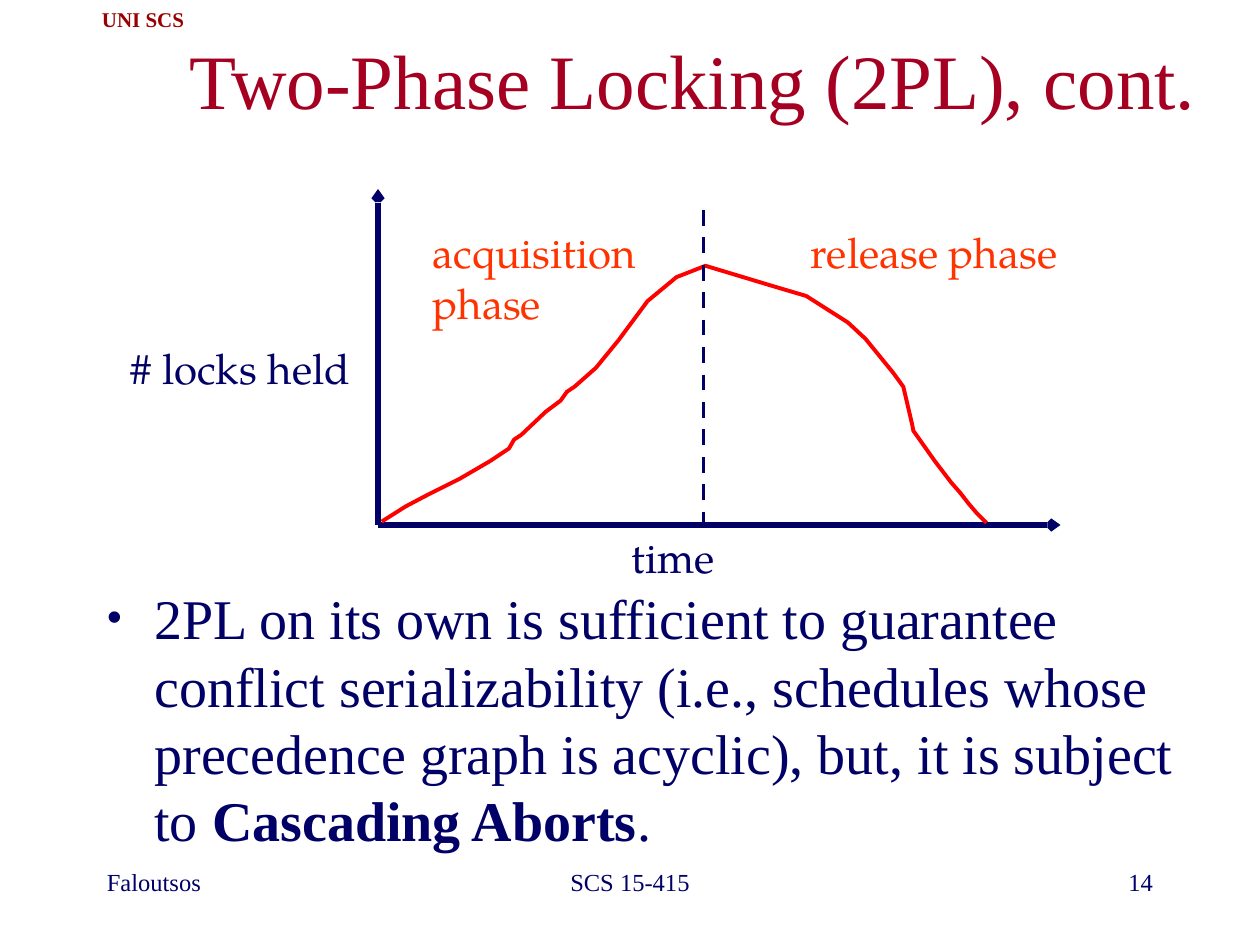
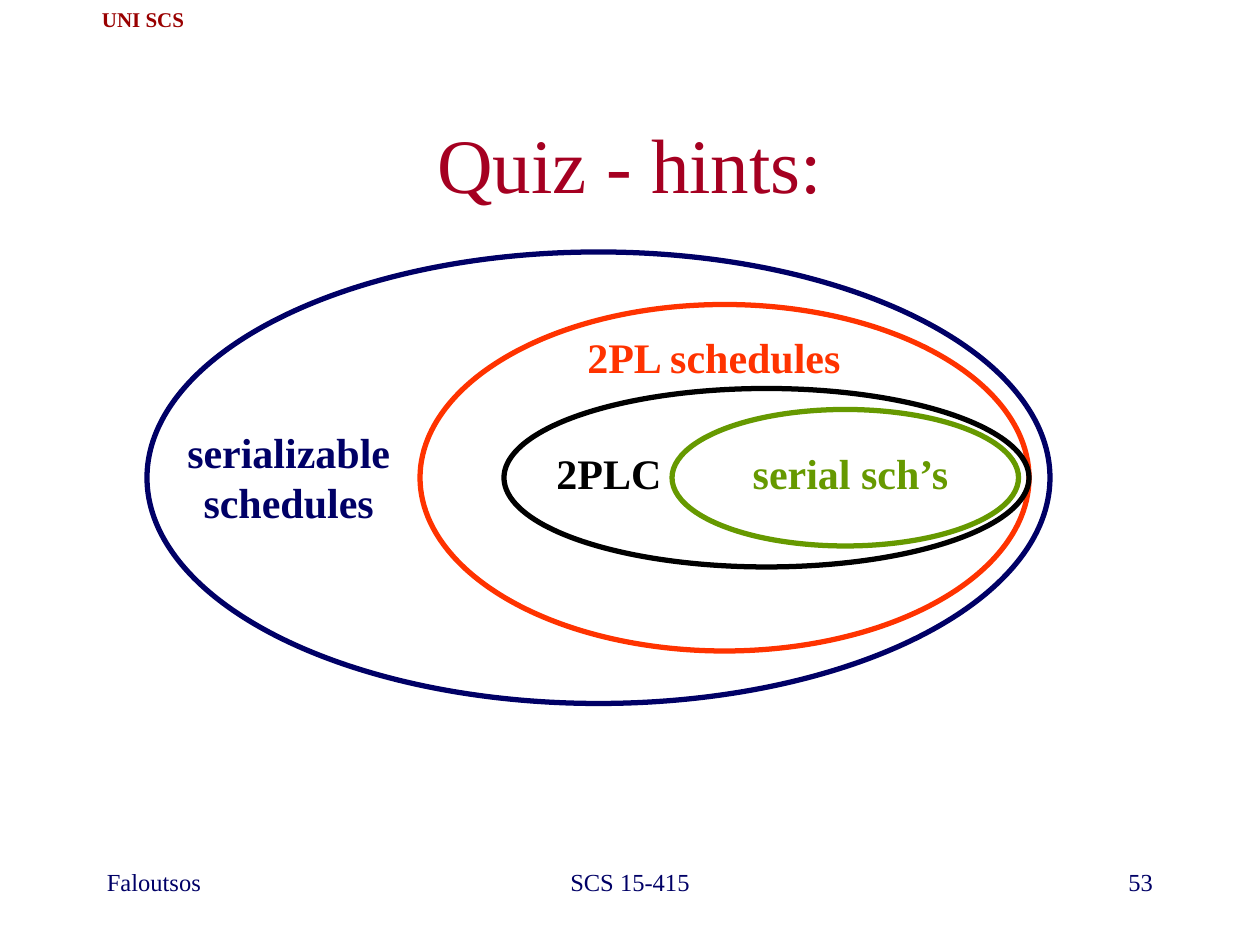
import pptx
import pptx.util
import pptx.dml.color
import pptx.enum.dml
import pptx.enum.shapes
import pptx.enum.text
import pptx.oxml.ns
import lxml.etree
from dataclasses import dataclass


@dataclass(frozen=True)
class Theme:
    """Colours, fonts and sizes shared by the slides; lengths count twelfths of an inch."""
    navy: str = "000066"
    crimson: str = "A50021"
    maroon: str = "990000"
    orange: str = "FF3300"
    red: str = "FF0000"
    green: str = "669900"
    black: str = "000000"
    serif: str = "Times New Roman"
    label_font: str = "TeX Gyre Pagella"
    title: int = 44
    body: int = 32
    label: int = 24
    footer: int = 14
    tag: int = 12
    thick: float = 3
    thin: float = 2.25


THEME = Theme()
COLUMNS, ROWS = 120, 90
ALIGN = pptx.enum.text.PP_ALIGN
MIDDLE = pptx.enum.text.MSO_ANCHOR.MIDDLE

SCHOOL_TAG = ("UNI SCS", (8, 0, 11.25, 3.6))
FOOTERS = [
    ("Faloutsos", (9, 82, 25, 6), ALIGN.LEFT),
    ("SCS 15-415", (41, 82, 38, 6), ALIGN.CENTER),
]
NUMBER_AREA = (86, 82, 25, 6)

LOCKING = dict(layout=1, title="Two-Phase Locking (2PL), cont.", area=(15, 0, 102, 15), number="14")
LOCKING_BODY_AREA = (9, 55, 105, 29)
LOCKING_BODY_INDENT = 4.5
LOCKING_BODY = [
    ("2PL on its own is sufficient to guarantee conflict serializability (i.e., schedules "
     "whose precedence graph is acyclic), but, it is subject to ", False),
    ("Cascading Aborts", True),
    (".", False),
]
ORIGIN = (36, 50)
AXIS_ENDS = [(101, 50), (36, 18)]
PHASE_BORDER = [(67, 20), (67, 50)]
CHART_LABELS = [
    ("time", (59, 50, 10.32, 6), THEME.navy, False),
    ("# locks held", (11.25, 32, 23.75, 6), THEME.navy, False),
    ("release phase", (76, 21, 25.92, 6), THEME.orange, False),
    ("acquisition phase", (40, 21, 26, 10.8), THEME.orange, True),
]
LOCKS_HELD_HUNDREDTHS = [
    (303, 414), (322, 402), (339, 393), (365, 380), (389, 366), (404, 356),
    (408, 349), (414, 345), (433, 327), (445, 318), (450, 311), (456, 307),
    (473, 292), (491, 270), (514, 239), (537, 220), (560, 211), (613, 227),
    (640, 235), (673, 256), (687, 269), (709, 296), (717, 307), (724, 337),
    (725, 342), (742, 366), (755, 383), (762, 391), (769, 400), (775, 407),
    (783, 415),
]

QUIZ = dict(layout=5, title="Quiz - hints:", area=(9, 8, 102, 15), number="53")
SCHEDULE_SETS = [
    ("serializable schedules", THEME.navy, (14, 24, 86, 43), (16, 40, 23, 10.8)),
    ("2PL schedules", THEME.orange, (40, 29, 58, 33), (50, 31, 36, 6)),
    ("serial sch’s", THEME.green, (64, 39, 33, 13), (70, 42, 22, 6)),
    ("2PLC", THEME.black, (48, 37, 50, 17), (50, 42, 16, 6)),
]


def grid(*cells):
    return [pptx.util.Inches(cell / 12) for cell in cells]


def colour(code):
    return pptx.dml.color.RGBColor.from_string(code)


def child(parent, tag, **attributes):
    return lxml.etree.SubElement(parent, pptx.oxml.ns.qn(tag), attributes)


def write(shape, spans, size, code, font=THEME.serif, align=ALIGN.LEFT, wrap=True, anchor=None):
    frame = shape.text_frame
    frame.auto_size = pptx.enum.text.MSO_AUTO_SIZE.NONE
    frame.word_wrap = wrap
    if anchor is not None:
        frame.vertical_anchor = anchor
    para = frame.paragraphs[0]
    para.alignment = align
    para.space_before = pptx.util.Pt(0)
    for text, bold in spans:
        span = para.add_run()
        span.text = text
        span.font.size = pptx.util.Pt(size)
        span.font.name = font
        span.font.bold = bold
        span.font.color.rgb = colour(code)
    return para


def place(shape, area):
    shape.left, shape.top, shape.width, shape.height = grid(*area)


def add_text(page, text, area, size, code, bold=False, **style):
    box = page.shapes.add_textbox(*grid(*area))
    write(box, [(text, bold)], size, code, **style)


def stroke(shape, code, width):
    shape.line.color.rgb = colour(code)
    shape.line.width = pptx.util.Pt(width)


def outline(shape, code, width):
    shape.shadow.inherit = False
    shape.fill.background()
    stroke(shape, code, width)


def add_line(page, start, end, width):
    line = page.shapes.add_connector(
        pptx.enum.shapes.MSO_CONNECTOR.STRAIGHT, *grid(*start, *end))
    stroke(line, THEME.navy, width)
    child(line._element.spPr, "a:effectLst")
    return line


def add_curve(page, points):
    first, *others = points
    builder = page.shapes.build_freeform(*first, scale=pptx.util.Inches(0.01))
    builder.add_line_segments(others, close=False)
    outline(builder.convert_to_shape(), THEME.red, THEME.thin)


def start_page(deck, layout, title, area, number):
    page = deck.slides.add_slide(deck.slide_layouts[layout])
    tag, tag_area = SCHOOL_TAG
    add_text(page, tag, tag_area, THEME.tag, THEME.maroon, bold=True,
             align=ALIGN.CENTER, wrap=False, anchor=MIDDLE)
    for text, footer_area, align in FOOTERS + [(number, NUMBER_AREA, ALIGN.RIGHT)]:
        add_text(page, text, footer_area, THEME.footer, THEME.navy, align=align)
    place(page.shapes.title, area)
    write(page.shapes.title, [(title, False)], THEME.title, THEME.crimson,
          align=ALIGN.CENTER, anchor=MIDDLE)
    return page


def build_locking(deck):
    page = start_page(deck, **LOCKING)
    body = page.placeholders[1]
    place(body, LOCKING_BODY_AREA)
    para = write(body, LOCKING_BODY, THEME.body, THEME.navy)
    properties = para._p.get_or_add_pPr()
    [indent] = grid(LOCKING_BODY_INDENT)
    properties.set("marL", str(indent))
    properties.set("indent", str(-indent))
    child(properties, "a:buSzPct", val="75000")
    child(properties, "a:buChar", char="•")

    for end in AXIS_ENDS:
        axis = add_line(page, ORIGIN, end, THEME.thick)
        child(axis.line._get_or_add_ln(), "a:tailEnd", type="arrow", w="sm", len="sm")
    add_curve(page, LOCKS_HELD_HUNDREDTHS)
    border = add_line(page, *PHASE_BORDER, THEME.thin)
    border.line.dash_style = pptx.enum.dml.MSO_LINE.DASH
    for text, area, code, wrap in CHART_LABELS:
        add_text(page, text, area, THEME.label, code, font=THEME.label_font, wrap=wrap)


def build_quiz(deck):
    page = start_page(deck, **QUIZ)
    for text, code, oval_area, label_area in SCHEDULE_SETS:
        oval = page.shapes.add_shape(pptx.enum.shapes.MSO_SHAPE.OVAL, *grid(*oval_area))
        outline(oval, code, THEME.thick)
        add_text(page, text, label_area, THEME.label, code, bold=True, align=ALIGN.CENTER)


def main():
    deck = pptx.Presentation()
    deck.slide_width, deck.slide_height = grid(COLUMNS, ROWS)
    build_locking(deck)
    build_quiz(deck)
    deck.save("out.pptx")


if __name__ == "__main__":
    main()
